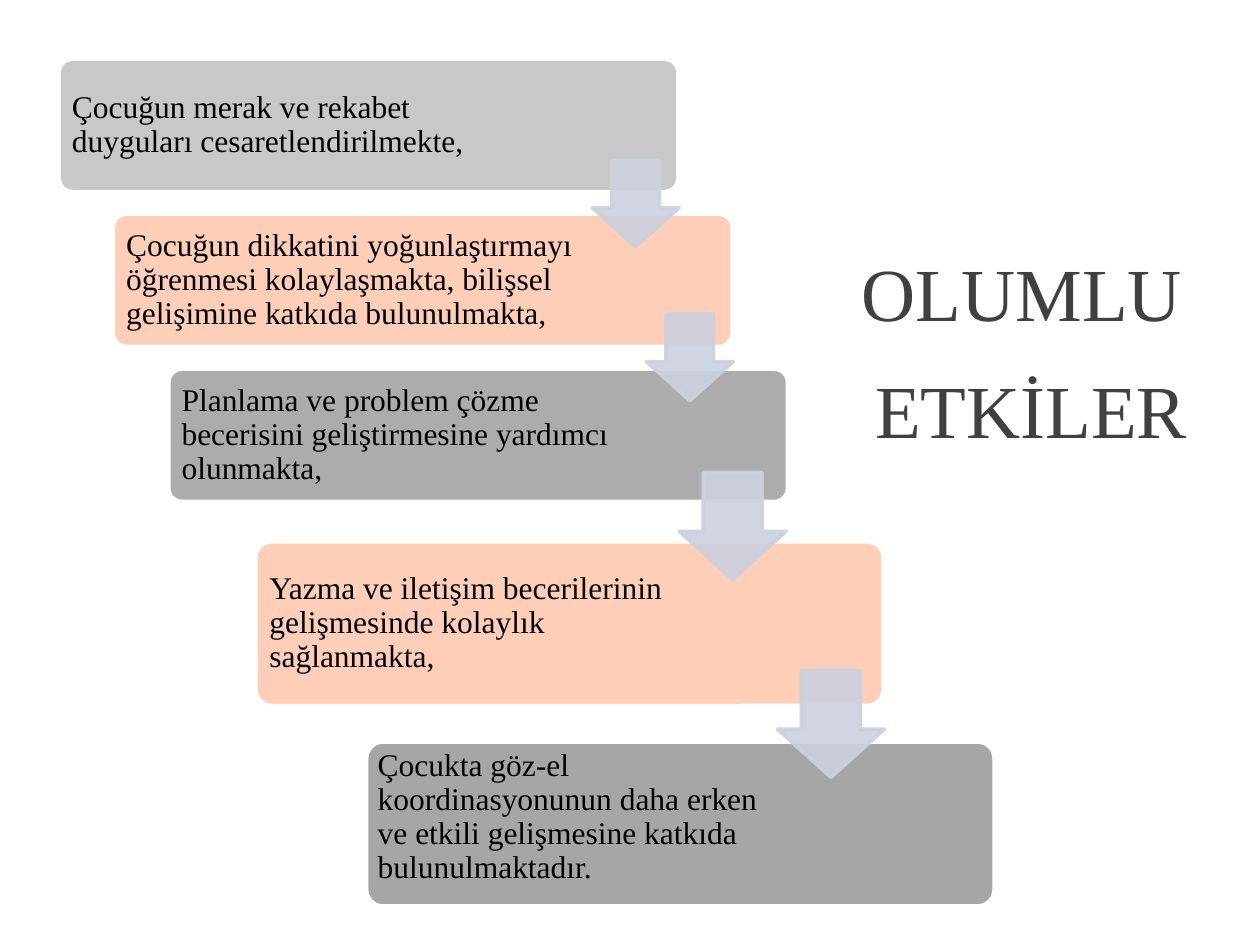
from typing import NamedTuple

from lxml import etree
from pptx import Presentation
from pptx.dml.color import RGBColor
from pptx.enum import shapes, text
from pptx.oxml import ns
from pptx.util import Inches, Pt

FONT = "Times New Roman"
CORNER = 0.1
CORNER_INSET = 0.29


class Step(NamedTuple):
    left: float
    top: float
    width: float
    height: float
    text_width: float
    fill: str
    wording: str
    side_margin: float = 0.07
    bottom_margin: float = 0.07


class Arrow(NamedTuple):
    left: float
    top: float
    size: float


SMALL = (4.91, 1.05)
LARGE = (4.98, 1.3)
PEACH = "FFCEB8"

STEPS = [
    Step(0.47, 0.47, *SMALL, 3.78, "C8C8C8",
         "Çocuğun merak ve rekabet duyguları cesaretlendirilmekte,"),
    Step(0.9, 1.7, *SMALL, 3.73, PEACH,
         "Çocuğun dikkatini yoğunlaştırmayı öğrenmesi kolaylaşmakta, "
         "bilişsel gelişimine katkıda bulunulmakta,"),
    Step(1.34, 2.93, *SMALL, 3.73, "ACACAC",
         "Planlama ve problem çözme becerisini geliştirmesine yardımcı olunmakta,"),
    Step(2.03, 4.3, *LARGE, 3.64, PEACH,
         "Yazma ve iletişim becerilerinin gelişmesinde kolaylık sağlanmakta,"),
    Step(2.91, 5.89, *LARGE, 3.18, "A6A6A6",
         "Çocukta göz-el koordinasyonunun daha erken ve etkili gelişmesine "
         "katkıda bulunulmaktadır.", 0.05, 0.15),
]

ARROWS = [
    Arrow(4.7, 1.27, 0.69),
    Arrow(5.13, 2.49, 0.69),
    Arrow(5.39, 3.75, 0.85),
    Arrow(6.17, 5.32, 0.85),
]


def color(value: str) -> RGBColor:
    return RGBColor.from_string(value)


def paint(shape, fill: str, line: str) -> None:
    shape.shadow.inherit = False
    shape.fill.solid()
    shape.fill.fore_color.rgb = color(fill)
    shape.line.color.rgb = color(line)
    shape.line.width = Pt(2)


def format_paragraph(paragraph, size: float, ink: str, spacing: float, align) -> None:
    paragraph.alignment = align
    paragraph.line_spacing = spacing
    for run in paragraph.runs:
        run.font.name = FONT
        run.font.size = Pt(size)
        run.font.color.rgb = color(ink)


def set_margins(frame, left: float, top: float, right: float, bottom: float) -> None:
    frame.margin_left = Inches(left)
    frame.margin_top = Inches(top)
    frame.margin_right = Inches(right)
    frame.margin_bottom = Inches(bottom)


def draw_step(slide, step: Step) -> None:
    card = slide.shapes.add_shape(
        shapes.MSO_SHAPE.ROUNDED_RECTANGLE,
        Inches(step.left), Inches(step.top), Inches(step.width), Inches(step.height))
    card.adjustments[0] = CORNER
    paint(card, step.fill, "FFFFFF")
    inset = CORNER * CORNER_INSET * step.height
    right = step.width - 2 * inset - step.text_width + step.side_margin
    frame = card.text_frame
    frame.word_wrap = True
    frame.vertical_anchor = text.MSO_ANCHOR.MIDDLE
    set_margins(frame, step.side_margin, step.side_margin, right, step.bottom_margin)
    frame.text = step.wording
    format_paragraph(frame.paragraphs[0], 18, "000000", 0.9, text.PP_ALIGN.LEFT)


def draw_arrow(slide, arrow: Arrow) -> None:
    pointer = slide.shapes.add_shape(
        shapes.MSO_SHAPE.DOWN_ARROW,
        Inches(arrow.left), Inches(arrow.top), Inches(arrow.size), Inches(arrow.size))
    pointer.adjustments[0] = 0.55
    pointer.adjustments[1] = 0.45
    paint(pointer, "CCD1DE", "CCD1DE")
    for tint in pointer.element.spPr.iter(ns.qn("a:srgbClr")):
        etree.SubElement(tint, ns.qn("a:alpha"), val="90000")


def draw_heading(slide) -> None:
    heading = slide.shapes.title
    heading.left, heading.top = Inches(6.25), Inches(1.17)
    heading.width, heading.height = Inches(3.75), Inches(2.73)
    frame = heading.text_frame
    frame.word_wrap = True
    frame.auto_size = text.MSO_AUTO_SIZE.NONE
    frame.vertical_anchor = text.MSO_ANCHOR.BOTTOM
    set_margins(frame, 0.22, 0.1, 0.1, 0.3)
    frame.text = "OLUMLU \nETKİLER"
    for paragraph in frame.paragraphs:
        format_paragraph(paragraph, 42.8, "404040", 1.3, text.PP_ALIGN.CENTER)


def main() -> None:
    deck = Presentation()
    deck.slide_width, deck.slide_height = Inches(10), Inches(7.5)
    slide = deck.slides.add_slide(deck.slide_layouts.get_by_name("Title Only"))
    draw_heading(slide)
    for step in STEPS:
        draw_step(slide, step)
    for arrow in ARROWS:
        draw_arrow(slide, arrow)
    deck.save("out.pptx")


if __name__ == "__main__":
    main()
